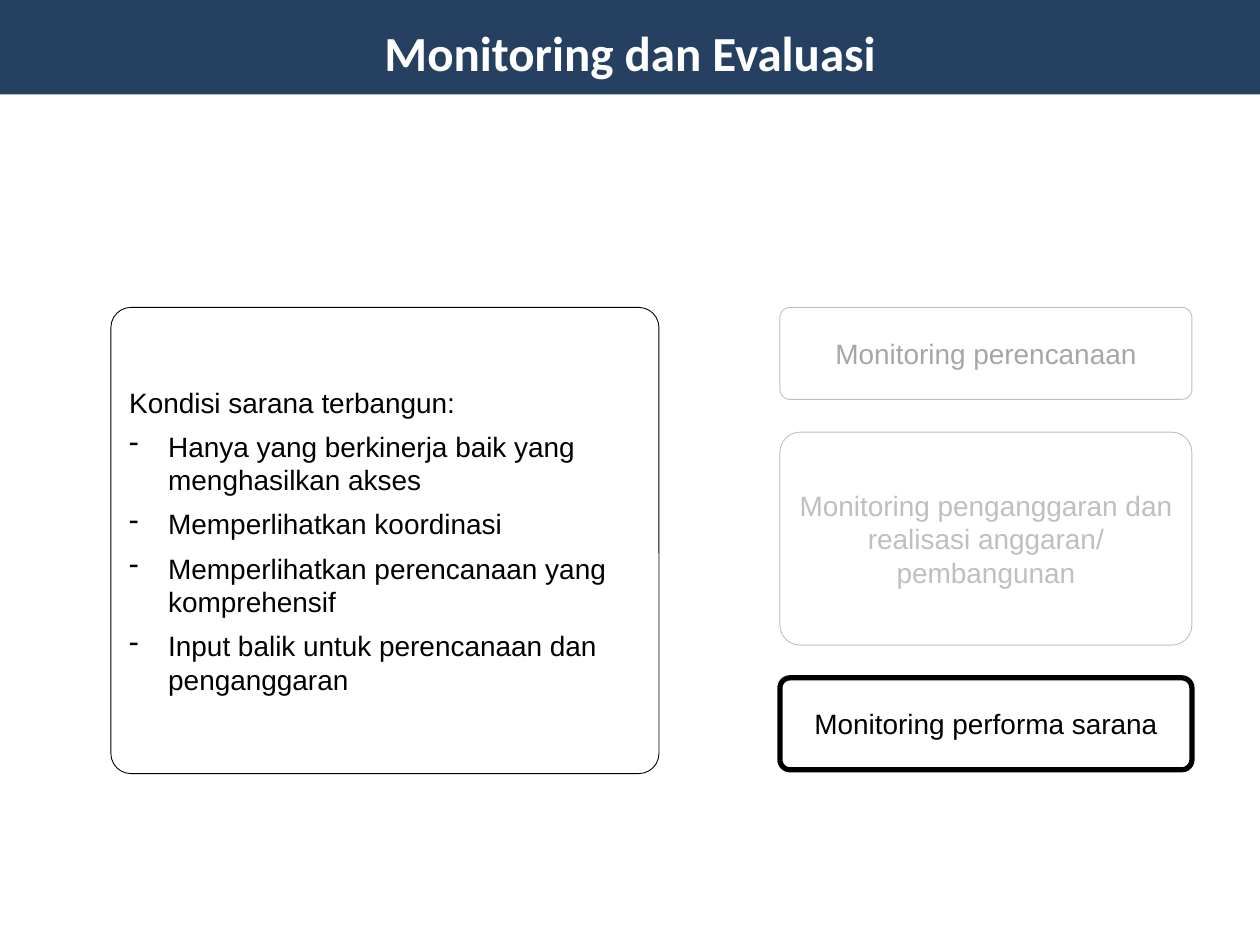
from dataclasses import dataclass

from lxml.etree import SubElement
from pptx import Presentation
from pptx.dml.color import RGBColor
from pptx.enum.shapes import MSO_SHAPE
from pptx.enum.text import MSO_ANCHOR, PP_ALIGN
from pptx.oxml.ns import qn
from pptx.util import Inches, Pt


@dataclass(frozen=True)
class Theme:
    band: RGBColor = RGBColor.from_string("254061")
    white: RGBColor = RGBColor.from_string("FFFFFF")
    black: RGBColor = RGBColor.from_string("000000")
    pale: RGBColor = RGBColor.from_string("BFBFBF")
    grey: RGBColor = RGBColor.from_string("A6A6A6")
    title_font: str = "Calibri"
    body_font: str = "Arial"
    title_size: int = 28
    body_size: int = 16


@dataclass(frozen=True)
class Card:
    lines: tuple[str, ...]
    left: float
    top: float
    width: float
    height: float
    line_color: RGBColor
    text_color: RGBColor
    line_width: float = 0.5
    filled: bool = True
    bulleted: bool = False


THEME = Theme()
CORNER = 0.08
INDENT = 0.31
TOP = 2.44
GAP = 0.26
SMALL_HEIGHT = 0.73
TALL_HEIGHT = 1.69
STAGE = {"left": 6.19, "width": 3.27}
BUDGET_TOP = TOP + SMALL_HEIGHT + GAP
FACILITY_TOP = BUDGET_TOP + TALL_HEIGHT + GAP

CARDS = (
    Card(("Monitoring perencanaan",), top=TOP, height=SMALL_HEIGHT,
         line_color=THEME.pale, text_color=THEME.grey, **STAGE),
    Card(("Monitoring performa sarana",), top=FACILITY_TOP, height=SMALL_HEIGHT,
         line_color=THEME.black, text_color=THEME.black, line_width=3,
         filled=False, **STAGE),
    Card(("Kondisi sarana terbangun:",
          "Hanya yang berkinerja baik yang menghasilkan akses",
          "Memperlihatkan koordinasi",
          "Memperlihatkan perencanaan yang komprehensif",
          "Input balik untuk perencanaan dan penganggaran"),
         0.88, TOP, 4.35, 3.7, THEME.black, THEME.black, bulleted=True),
    Card(("Monitoring penganggaran dan realisasi anggaran/ pembangunan",),
         top=BUDGET_TOP, height=TALL_HEIGHT,
         line_color=THEME.pale, text_color=THEME.pale, **STAGE),
)


def apply(target, values: dict) -> None:
    for name, value in values.items():
        setattr(target, name, value)


def place(shape, left: float, top: float, width: float, height: float) -> None:
    apply(shape, {"left": Inches(left), "top": Inches(top),
                  "width": Inches(width), "height": Inches(height)})


def write_span(para, text: str, font: str, size: int, color: RGBColor, bold: bool) -> None:
    span = para.add_run()
    span.text = text
    apply(span.font, {"name": font, "size": Pt(size), "bold": bold})
    span.font.color.rgb = color


def add_dash(para) -> None:
    properties = para._p.get_or_add_pPr()
    properties.set("marL", str(Inches(INDENT)))
    properties.set("indent", str(-Inches(INDENT)))
    SubElement(properties, qn("a:buFontTx"))
    SubElement(properties, qn("a:buChar")).set("char", "-")


def draw_title(page, text: str) -> None:
    band = page.shapes.add_shape(MSO_SHAPE.RECTANGLE, 0, 0, 0, 0)
    place(band, 0, -0.02, 10, 0.77)
    band.shadow.inherit = False
    band.fill.solid()
    band.fill.fore_color.rgb = THEME.band
    band.line.fill.background()
    title = page.shapes.title
    title.element.addprevious(band.element)
    place(title, 0.73, 0.07, 8.54, 0.68)
    frame = title.text_frame
    apply(frame, {"margin_left": 0, "margin_right": 0, "margin_top": 0,
                  "margin_bottom": 0, "word_wrap": True,
                  "vertical_anchor": MSO_ANCHOR.MIDDLE})
    para = frame.paragraphs[0]
    para.alignment = PP_ALIGN.CENTER
    write_span(para, text, THEME.title_font, THEME.title_size, THEME.white, True)


def draw_card(page, card: Card) -> None:
    box = page.shapes.add_shape(MSO_SHAPE.ROUNDED_RECTANGLE, 0, 0, 0, 0)
    place(box, card.left, card.top, card.width, card.height)
    box.adjustments[0] = CORNER * 2 / card.height if card.height > 1 else CORNER / card.height
    box.shadow.inherit = False
    if card.filled:
        box.fill.solid()
        box.fill.fore_color.rgb = THEME.white
    else:
        box.fill.background()
    box.line.color.rgb = card.line_color
    box.line.width = Pt(card.line_width)
    frame = box.text_frame
    apply(frame, {"word_wrap": True, "vertical_anchor": MSO_ANCHOR.MIDDLE})
    for index, line in enumerate(card.lines):
        para = frame.add_paragraph() if index else frame.paragraphs[0]
        apply(para, {"alignment": PP_ALIGN.LEFT if card.bulleted else PP_ALIGN.CENTER,
                     "space_after": Pt(6)})
        if card.bulleted and index:
            add_dash(para)
        write_span(para, line, THEME.body_font, THEME.body_size, card.text_color, False)


def main() -> None:
    deck = Presentation()
    apply(deck, {"slide_width": Inches(10), "slide_height": Inches(7.5)})
    page = deck.slides.add_slide(deck.slide_layouts[5])
    draw_title(page, "Monitoring dan Evaluasi")
    for card in CARDS:
        draw_card(page, card)
    deck.save("out.pptx")


if __name__ == "__main__":
    main()
